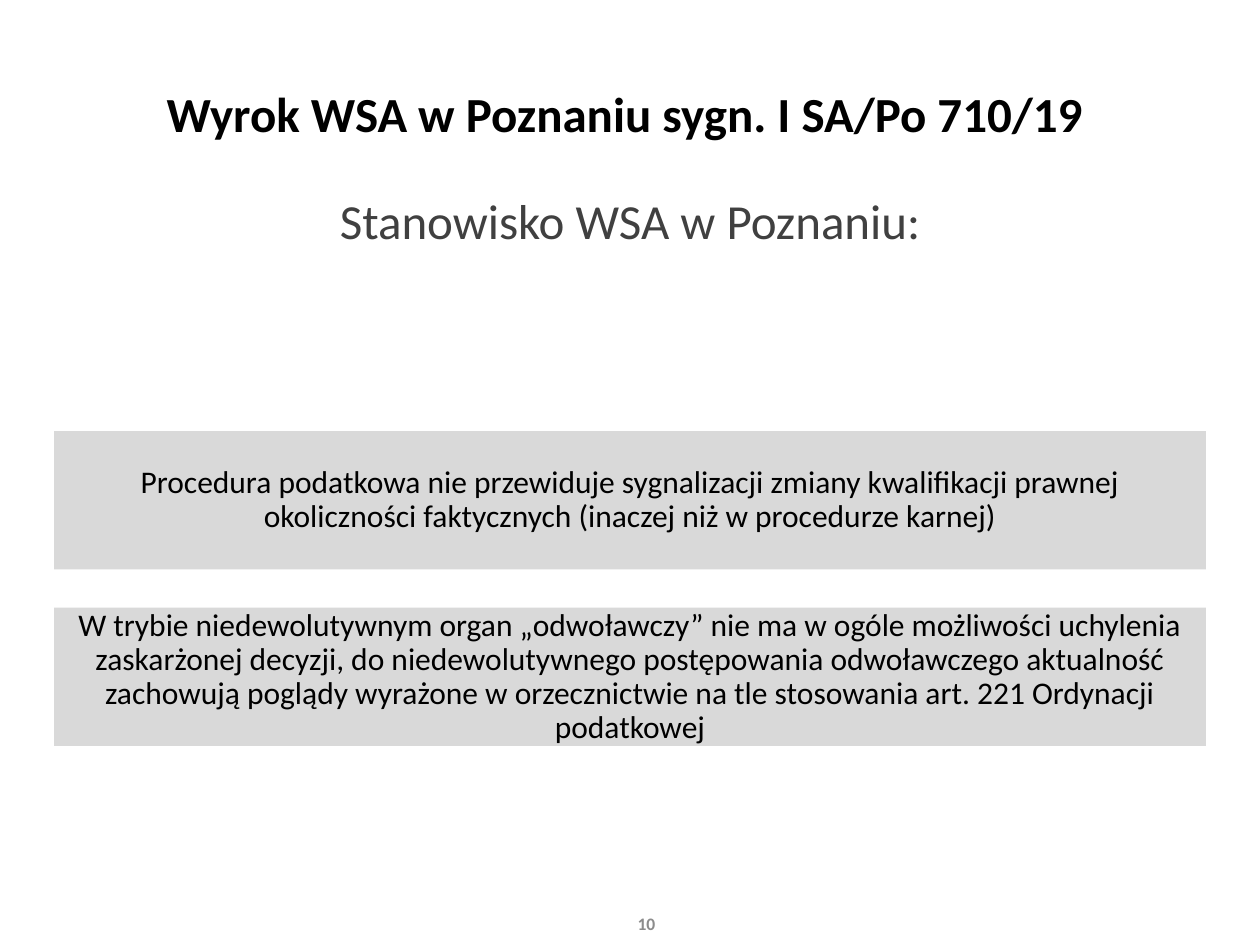
from pptx import Presentation as Deck
from pptx.dml.color import RGBColor as Rgb
from pptx.enum.shapes import MSO_SHAPE as Kind
from pptx.enum.text import MSO_ANCHOR as Anchor, PP_ALIGN as Align
from pptx.util import Cm, Pt

# Content
TITLE = "Wyrok WSA w Poznaniu sygn. I SA/Po 710/19 "
LEAD = "Stanowisko WSA w Poznaniu:"
POINTS = [
    "Procedura podatkowa nie przewiduje sygnalizacji zmiany kwalifikacji "
    "prawnej okoliczności faktycznych (inaczej niż w procedurze karnej)",
    "W trybie niedewolutywnym organ „odwoławczy” nie ma w ogóle możliwości "
    "uchylenia zaskarżonej decyzji, do niedewolutywnego postępowania "
    "odwoławczego aktualność zachowują poglądy wyrażone w orzecznictwie "
    "na tle stosowania art. 221 Ordynacji podatkowej",
]
PAGE = "10"

# Theme: colours and type
FONT = "Calibri"
FILL = "D9D9D9"
THEME = {
    "title": {"size": Pt(28), "bold": True, "color": "000000"},
    "lead": {"size": Pt(28), "bold": False, "color": "404040"},
    "point": {"size": Pt(18), "bold": False, "color": "000000"},
    "page": {"size": Pt(10), "bold": True, "color": "8C8C8C"},
}

# Layout in centimetres
WIDE, HIGH = 25.4, 19.05
BAR_W, BAR_H, BAR_TOP, GAP = 23.22, 2.79, 8.69, 0.77


def put(item, text, style, align=Align.CENTER, lines=0.9, top=0.13):
    frame = item.text_frame
    form = {"word_wrap": True, "vertical_anchor": Anchor.MIDDLE,
            "margin_left": Cm(0.25), "margin_right": Cm(0.25),
            "margin_top": Cm(top), "margin_bottom": Cm(0.13)}
    for key, value in form.items():
        setattr(frame, key, value)
    para = frame.paragraphs[0]
    para.alignment, para.line_spacing = align, lines
    run = para.add_run()
    run.text = text
    run.font.name = FONT
    for key, value in THEME[style].items():
        if key == "color":
            run.font.color.rgb = Rgb.from_string(value)
        else:
            setattr(run.font, key, value)


def main():
    deck = Deck()
    deck.slide_width, deck.slide_height = Cm(WIDE), Cm(HIGH)
    shapes = deck.slides.add_slide(deck.slide_layouts[6]).shapes

    def box(*place):
        return shapes.add_textbox(*map(Cm, place))

    # Heading, page number and lead line
    put(box(0, 1.55, WIDE, 1.73), TITLE, "title", top=0)
    put(box(11.94, 18.11, 1.52, 1.02), PAGE, "page", Align.RIGHT, 1.0)
    put(box(0, 2.64, WIDE, 3.73), LEAD, "lead")

    # Grey bars, one for each point
    left = (WIDE - BAR_W) / 2
    for row, text in enumerate(POINTS):
        top = BAR_TOP + row * (BAR_H + GAP)
        bar = shapes.add_shape(Kind.RECTANGLE,
                               *map(Cm, (left, top, BAR_W, BAR_H)))
        bar.shadow.inherit = False
        bar.fill.solid()
        bar.fill.fore_color.rgb = Rgb.from_string(FILL)
        bar.line.fill.background()
        put(bar, text, "point")

    deck.save("out.pptx")


if __name__ == "__main__":
    main()
